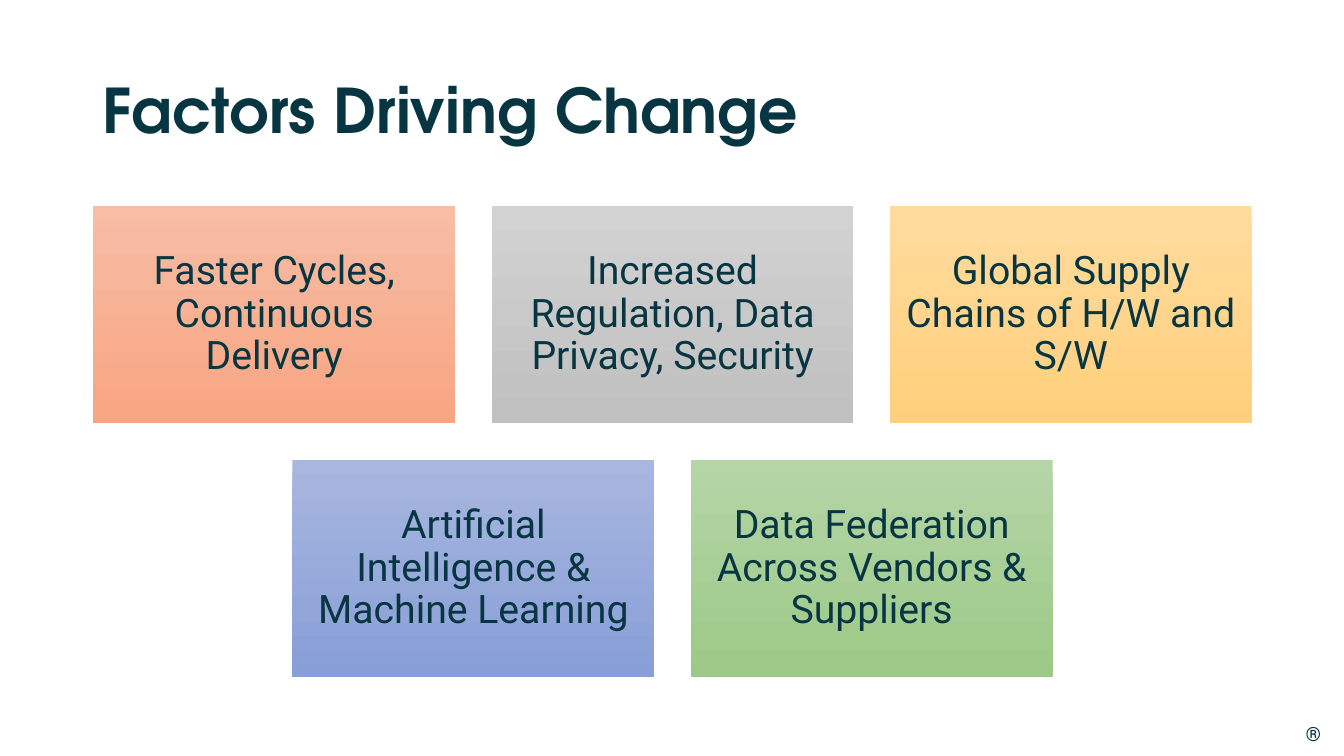
"""Builds the slide on the factors driving change."""
from pptx import Presentation
from pptx.dml.color import RGBColor
from pptx.enum.shapes import MSO_SHAPE
from pptx.enum.text import MSO_ANCHOR, MSO_AUTO_SIZE, PP_ALIGN
from pptx.util import Inches, Pt

RECT = MSO_SHAPE.RECTANGLE
MIDDLE = MSO_ANCHOR.MIDDLE
NO_FIT = MSO_AUTO_SIZE.NONE
LEFT, CENTER = PP_ALIGN.LEFT, PP_ALIGN.CENTER

INK = RGBColor(0x07, 0x36, 0x42)
CORAL = RGBColor(0xF7, 0xBD, 0xA5), RGBColor(0xF8, 0xA5, 0x82)
GREY = RGBColor(0xD2, 0xD2, 0xD2), RGBColor(0xC0, 0xC0, 0xC0)
AMBER = RGBColor(0xFF, 0xDB, 0x9E), RGBColor(0xFF, 0xD0, 0x7C)
BLUE = RGBColor(0xA8, 0xB7, 0xDF), RGBColor(0x88, 0x9E, 0xD7)
GREEN = RGBColor(0xB5, 0xD5, 0xA7), RGBColor(0x9C, 0xC9, 0x87)

ROWS = [
    [("Faster Cycles, Continuous Delivery", CORAL),
     ("Increased Regulation, Data Privacy, Security", GREY),
     ("Global Supply Chains of H/W and S/W", AMBER)],
    [("Artificial Intelligence & Machine Learning", BLUE),
     ("Data Federation Across Vendors & Suppliers", GREEN)],
]
CARD_W, CARD_H, GAP = 3.59, 2.16, 0.36
CENTER_X, TOP = 6.67, 2.04


class Deck:
    HEAD_FONT = "TeX Gyre Adventor"
    BODY_FONT = "Roboto"

    def __init__(self, prs):
        self.s = prs.slides.add_slide(prs.slide_layouts[5])

    def set_text(self, sp, text, size, font, align, inset, bold=False, spacing=0.9):
        tf = sp.text_frame
        tf.word_wrap = True
        tf.auto_size = NO_FIT
        tf.vertical_anchor = MIDDLE
        tf.margin_left = tf.margin_right = Inches(inset)
        tf.margin_top = tf.margin_bottom = Inches(inset)
        p = tf.paragraphs[0]
        p.text = text
        p.alignment = align
        p.line_spacing = spacing
        p.font.name = font
        p.font.size = Pt(size)
        p.font.bold = bold
        p.font.color.rgb = INK

    def title(self, text, x, y, w, h):
        sp = self.s.shapes.title
        sp.left, sp.top, sp.width, sp.height = map(Inches, (x, y, w, h))
        self.set_text(sp, text, 44, self.HEAD_FONT, LEFT, 0.1, bold=True)

    def card(self, text, colors, x, y):
        sp = self.s.shapes.add_shape(
            RECT, Inches(x), Inches(y), Inches(CARD_W), Inches(CARD_H))
        sp.shadow.inherit = False
        sp.line.fill.background()
        sp.fill.gradient()
        sp.fill.gradient_angle = 270
        for stop, color in zip(sp.fill.gradient_stops, colors):
            stop.color.rgb = color
        self.set_text(sp, text, 28, self.BODY_FONT, CENTER, 0.12)

    def mark(self, text, x, y, w, h):
        sp = self.s.shapes.add_textbox(Inches(x), Inches(y), Inches(w), Inches(h))
        self.set_text(sp, text, 14, self.BODY_FONT, LEFT, 0, spacing=1.0)


def main():
    prs = Presentation()
    prs.slide_width, prs.slide_height = Inches(13.33), Inches(7.5)
    deck = Deck(prs)
    deck.mark("®", 12.95, 7.16, 0.18, 0.24)
    deck.title("Factors Driving Change", 0.92, 0.4, 11.5, 1.45)
    for i, row in enumerate(ROWS):
        left = CENTER_X - (len(row) * (CARD_W + GAP) - GAP) / 2
        for j, (text, colors) in enumerate(row):
            deck.card(text, colors, left + j * (CARD_W + GAP), TOP + i * (CARD_H + GAP))
    prs.save("out.pptx")


if __name__ == "__main__":
    main()
